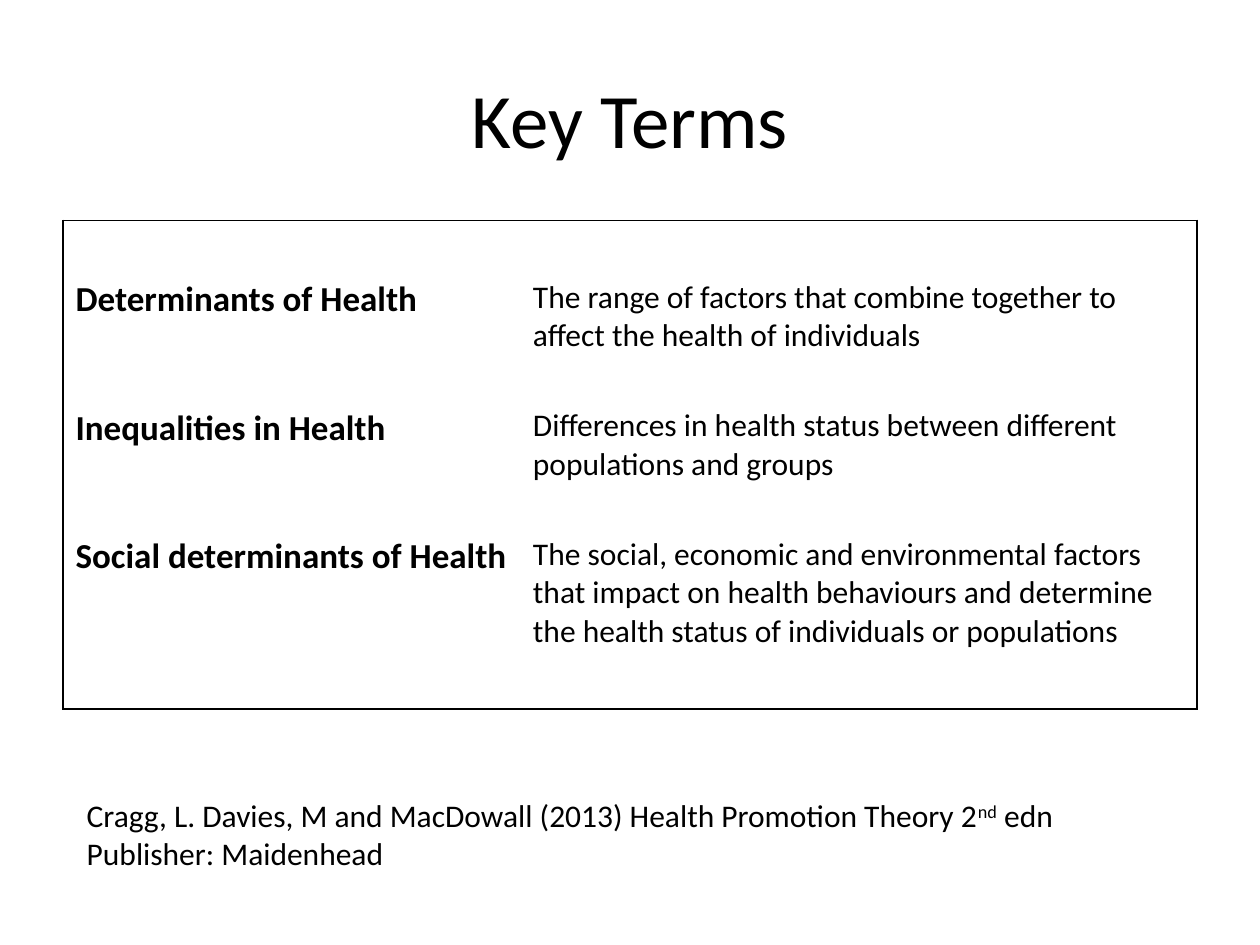
from dataclasses import dataclass

from lxml import etree
from pptx import Presentation
from pptx import util as u
from pptx.dml.color import RGBColor
from pptx.enum import text
from pptx.oxml import ns


@dataclass(frozen=True)
class Theme:
    font: str = "Calibri"
    ink: RGBColor = RGBColor(0, 0, 0)
    paper: RGBColor = RGBColor(255, 255, 255)
    title: int = 44
    term: int = 20
    body: int = 18
    rule: int = 1


class Deck:
    def __init__(self, theme):
        self.theme = theme
        self.prs = Presentation()
        self.prs.slide_width, self.prs.slide_height = u.Inches(10), u.Inches(7.5)
        self.s = self.prs.slides.add_slide(self.prs.slide_layouts[5])

    def box(self, x, y, w, h):
        width, height = self.prs.slide_width, self.prs.slide_height
        return [round(v) for v in (x * width, y * height, w * width, h * height)]

    def style(self, p, size, bold=False):
        p.font.name = self.theme.font
        p.font.size = u.Pt(size)
        p.font.bold = bold
        p.font.color.rgb = self.theme.ink

    def title(self, words, *place):
        sp = self.s.shapes.title
        sp.left, sp.top, sp.width, sp.height = self.box(*place)
        tf = sp.text_frame
        tf.text = words
        tf.vertical_anchor = text.MSO_ANCHOR.MIDDLE
        tf.paragraphs[0].alignment = text.PP_ALIGN.CENTER
        self.style(tf.paragraphs[0], self.theme.title)

    def border(self, cell, side, visible):
        tc_pr = cell._tc.get_or_add_tcPr()
        ln = etree.SubElement(tc_pr, ns.qn(f"a:ln{side}"), w=str(u.Pt(self.theme.rule)))
        if visible:
            fill = etree.SubElement(ln, ns.qn("a:solidFill"))
            etree.SubElement(fill, ns.qn("a:srgbClr"), val=str(self.theme.ink))
        else:
            etree.SubElement(ln, ns.qn("a:noFill"))

    def framed_table(self, rows, widths, heights, *place):
        table = self.s.shapes.add_table(len(rows), len(widths), *self.box(*place)).table
        table.first_row = table.horz_banding = False
        for column, width in zip(table.columns, widths):
            column.width = u.Inches(width)
        last_row, last_col = len(rows) - 1, len(widths) - 1
        for i, row in enumerate(rows):
            table.rows[i].height = u.Inches(heights[i])
            for j, words in enumerate(row):
                cell = table.cell(i, j)
                edges = {"L": j == 0, "R": j == last_col, "T": i == 0, "B": i == last_row}
                for side, visible in edges.items():
                    self.border(cell, side, visible)
                cell.fill.solid()
                cell.fill.fore_color.rgb = self.theme.paper
                cell.text = words
                is_term = bool(words) and j == 0
                size = self.theme.term if is_term else self.theme.body
                self.style(cell.text_frame.paragraphs[0], size, is_term)

    def citation(self, before, raised, after, publisher, *place):
        tf = self.s.shapes.add_textbox(*self.box(*place)).text_frame
        tf.word_wrap = True
        p = tf.paragraphs[0]
        self.style(p, self.theme.body)
        p.add_run().text = before
        r = p.add_run()
        r.text = raised
        r.font._element.set("baseline", "30000")
        p.add_run().text = after
        p.add_line_break()
        p.add_run().text = publisher


TERMS = [
    ("Determinants of Health",
     "The range of factors that combine together to affect the health of individuals"),
    ("Inequalities in Health",
     "Differences in health status between different populations and groups"),
    ("Social determinants of Health",
     "The social, economic and environmental factors that impact on health behaviours "
     "and determine the health status of individuals or populations"),
]


def main():
    deck = Deck(Theme())
    deck.title("Key Terms", 0.05, 0.04, 0.9, 0.17)
    margin = ("", "")
    deck.framed_table([margin, *TERMS, margin], [3.63, 5.37],
                      [0.41, *[1.02] * len(TERMS), 0.41], 0.05, 0.2333, 0.9, 0.515)
    deck.citation("Cragg, L. Davies, M and MacDowall (2013) Health Promotion Theory 2",
                  "nd", " edn", "Publisher: Maidenhead", 0.059, 0.836, 0.866, 0.094)
    deck.prs.save("out.pptx")


if __name__ == "__main__":
    main()
